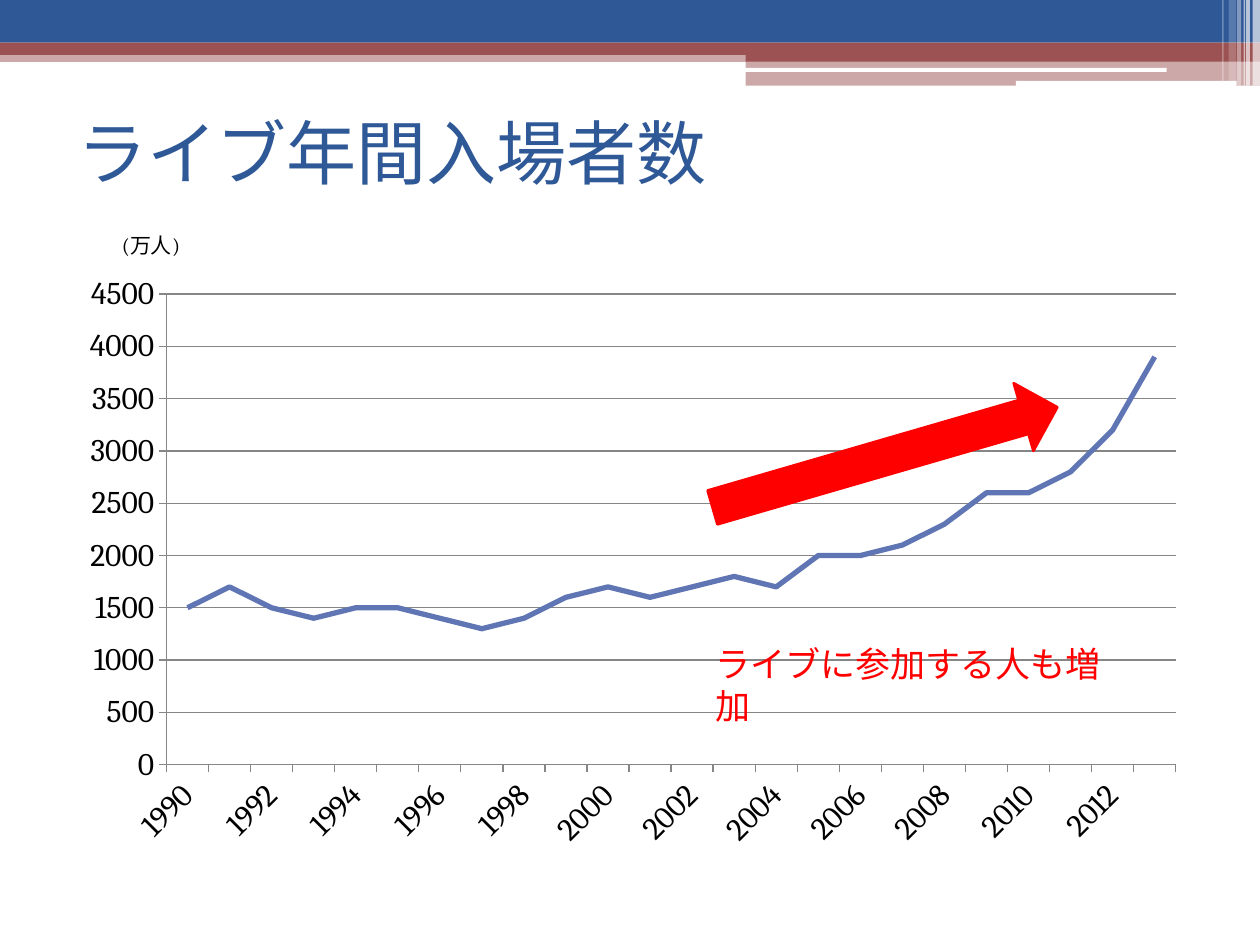
from pptx import Presentation, util as u
from pptx.chart import data
from pptx.dml.color import RGBColor
from pptx.enum import chart as ch, shapes, text
from pptx.oxml import parse_xml, ns

BLUE = RGBColor(0x2F, 0x58, 0x97)
BRICK = RGBColor(0x9C, 0x52, 0x52)
LINE = RGBColor(0x60, 0x76, 0xB4)
GRAY = RGBColor(0x86, 0x86, 0x86)
RED = RGBColor(0xFF, 0, 0)
WHITE = RGBColor(0xFF, 0xFF, 0xFF)
BLACK = RGBColor(0, 0, 0)
KIND = shapes.MSO_SHAPE

BANDS = [
    (0, 1.02, 25.4, 0.23, BRICK, 50),
    (0, 0, 25.4, 0.86, BLUE, 100),
    (0, 0.86, 25.4, 0.25, BRICK, 100),
    (15.03, 0.99, 10.37, 0.25, BRICK, 100),
    (15.03, 1.23, 10.37, 0.5, BRICK, 50),
]
PILLS = [(15.01, 1.37, 8.51, 0.08), (20.48, 1.63, 4.45, 0.1)]
STRIPES = [
    (25.25, 0.15, 1.73, 65),
    (25.12, 0.08, 1.73, 65),
    (25.07, 0.03, 1.73, 60),
    (24.94, 0.08, 1.73, 40),
    (24.77, 0.15, 1.63, 20),
    (24.64, 0.03, 1.63, 30),
]
CROWDS = [1500, 1700, 1500, 1400, 1500, 1500, 1400, 1300, 1400, 1600, 1700, 1600,
          1700, 1800, 1700, 2000, 2000, 2100, 2300, 2600, 2600, 2800, 3200, 3900]


class Deck:
    """Holds the style and the current slide, and adds each kind of element."""

    face = "Cambria"
    kanji = "Noto Sans CJK JP"
    head = "Roboto"

    def __init__(self):
        self.prs = Presentation()
        self.prs.slide_width, self.prs.slide_height = u.Cm(25.4), u.Cm(19.05)
        self.slide = self.prs.slides.add_slide(self.prs.slide_layouts[5])

    def font(self, font, name, size, color):
        font.name, font.size = name, u.Pt(size)
        font.color.rgb = color

    def shape(self, kind, box, color, alpha=100):
        item = self.slide.shapes.add_shape(kind, *map(u.Cm, box))
        item.shadow.inherit = False
        item.fill.solid()
        item.fill.fore_color.rgb = color
        item.line.fill.background()
        if alpha < 100:
            tint = item.fill._xPr.find(".//" + ns.qn("a:srgbClr"))
            tint.append(parse_xml(f'<a:alpha {ns.nsdecls("a")} val="{alpha * 1000}"/>'))
        return item

    def arrow(self, box, angle, color):
        item = self.shape(KIND.RIGHT_ARROW, box, color)
        item.rotation = angle
        item.line.color.rgb = color
        item.line.width = u.Pt(1.5)

    def title(self, words, box):
        item = self.slide.shapes.title
        item.left, item.top, item.width, item.height = map(u.Cm, box)
        frame = item.text_frame
        frame.text = words
        frame.vertical_anchor = text.MSO_ANCHOR.MIDDLE
        para = frame.paragraphs[0]
        para.alignment = text.PP_ALIGN.LEFT
        self.font(para.font, self.head, 40, BLUE)

    def label(self, words, box, name, size, color):
        frame = self.slide.shapes.add_textbox(*map(u.Cm, box)).text_frame
        frame.word_wrap = True
        frame.auto_size = text.MSO_AUTO_SIZE.SHAPE_TO_FIT_TEXT
        frame.text = words
        self.font(frame.paragraphs[0].font, name, size, color)

    def axis(self, axis):
        axis.major_tick_mark = ch.XL_TICK_MARK.OUTSIDE
        axis.minor_tick_mark = ch.XL_TICK_MARK.NONE
        axis.format.line.color.rgb = GRAY

    def chart(self, start, vals, box):
        info = data.CategoryChartData()
        info.categories = [str(start + i) for i in range(len(vals))]
        info.add_series("Series 1", vals)
        graph = self.slide.shapes.add_chart(
            ch.XL_CHART_TYPE.LINE, *map(u.Cm, box), info).chart
        graph.has_legend = graph.has_title = False
        self.font(graph.font, self.face, 18, BLACK)
        plot = graph.plots[0]
        plot.vary_by_categories = False
        line = plot.series[0]
        line.smooth = False
        line.format.line.color.rgb = LINE
        line.format.line.width = u.Pt(3)
        years, count = graph.category_axis, graph.value_axis
        self.axis(years)
        self.axis(count)
        count.minimum_scale, count.maximum_scale, count.major_unit = 0, 4500, 500
        count.major_gridlines.format.line.color.rgb = GRAY
        self.font(years.tick_labels.font, self.face, 18, BLACK)
        years._element.txPr.bodyPr.set("rot", "-2700000")
        skip = parse_xml(f'<c:tickLblSkip {ns.nsdecls("c")} val="2"/>')
        years._element.find(ns.qn("c:noMultiLvlLbl")).addprevious(skip)
        area = graph._chartSpace.chart.plotArea
        for old in area.findall(ns.qn("c:layout")):
            area.remove(old)
        rows = "".join(f'<c:{k} val="{v}"/>' for k, v in (
            ("layoutTarget", "inner"), ("xMode", "edge"), ("yMode", "edge"),
            ("x", 0.09), ("y", 0.05), ("w", 0.89), ("h", 0.79)))
        area.insert(0, parse_xml(
            f'<c:layout {ns.nsdecls("c")}><c:manualLayout>{rows}</c:manualLayout></c:layout>'))


def main():
    deck = Deck()
    for *box, color, alpha in BANDS:
        deck.shape(KIND.RECTANGLE, box, color, alpha)
    for box in PILLS:
        deck.shape(KIND.ROUNDED_RECTANGLE, box, WHITE)
    for left, width, height, alpha in STRIPES:
        deck.shape(KIND.RECTANGLE, (left, 0, width, height), WHITE, alpha)
    deck.title("ライブ年間入場者数", (1.3, 1.57, 22.86, 2.97))
    deck.chart(1990, CROWDS, (1.3, 5.33, 22.86, 12.01))
    deck.arrow((14.22, 8.51, 7.24, 1.42), 343.8, RED)
    deck.label("ライブに参加する人も増加", (14.17, 12.83, 8.94, 1.12), deck.kanji, 20, RED)
    deck.label("(万人)", (2.21, 4.57, 2.39, 0.76), deck.face, 12, BLACK)
    deck.prs.save("out.pptx")


if __name__ == "__main__":
    main()
